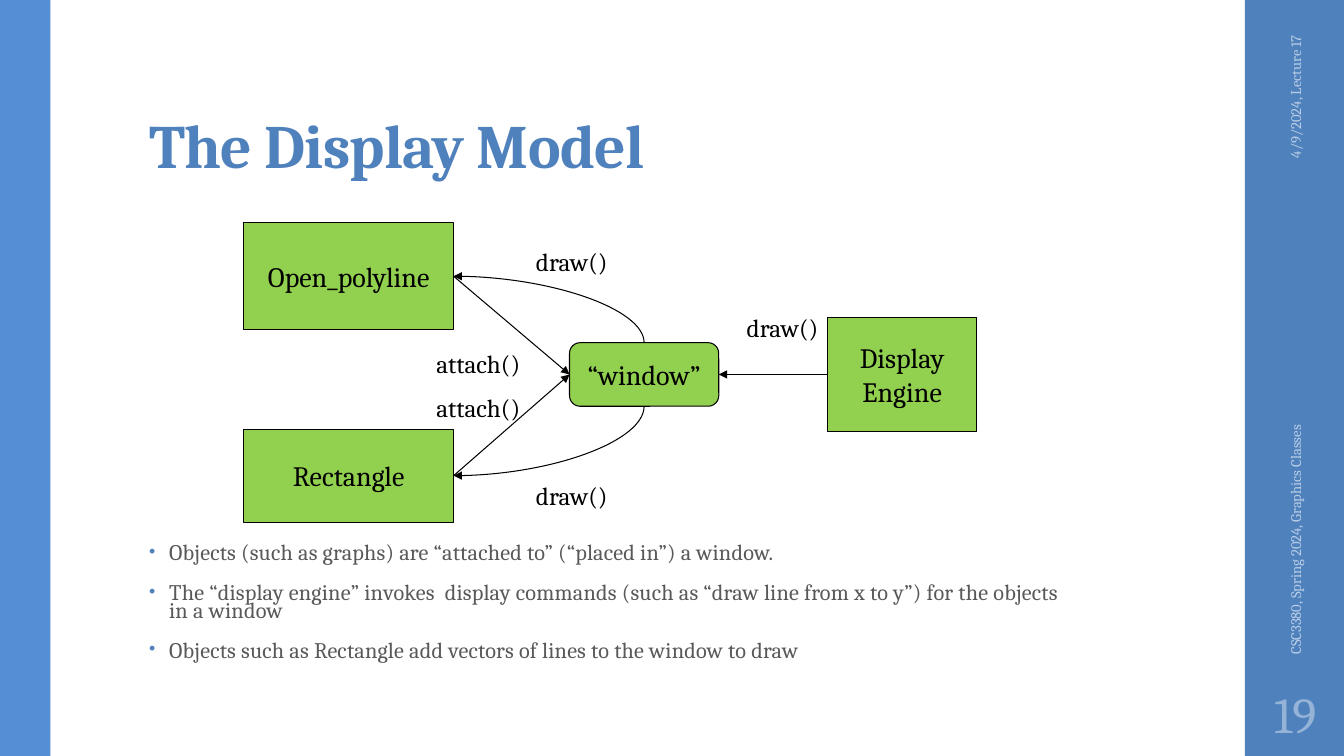
from lxml import etree
from pptx import Presentation
from pptx.dml.color import RGBColor
from pptx.enum.shapes import MSO_CONNECTOR, MSO_SHAPE
from pptx.enum.text import MSO_ANCHOR, MSO_AUTO_SIZE, PP_ALIGN
from pptx.oxml.ns import qn
from pptx.util import Pt

RECT, ROUND = MSO_SHAPE.RECTANGLE, MSO_SHAPE.ROUNDED_RECTANGLE
STRAIGHT, CURVE = MSO_CONNECTOR.STRAIGHT, MSO_CONNECTOR.CURVE
LEFT, CENTER, RIGHT = PP_ALIGN.LEFT, PP_ALIGN.CENTER, PP_ALIGN.RIGHT
TOP_ANCHOR, MIDDLE, BOTTOM_ANCHOR = MSO_ANCHOR.TOP, MSO_ANCHOR.MIDDLE, MSO_ANCHOR.BOTTOM
NO_FIT, GROW = MSO_AUTO_SIZE.NONE, MSO_AUTO_SIZE.SHAPE_TO_FIT_TEXT
TOP_SIDE, LEFT_SIDE, BOTTOM_SIDE, RIGHT_SIDE = range(4)

BLUE, LIGHT_BLUE, GREEN, BLACK = "4F81BD", "558ED5", "92D050", "000000"


def rgb(value):
    return RGBColor.from_string(value)


def assign(target, values):
    """Set each attribute of target that values names."""
    for name, value in values.items():
        setattr(target, name, value)


class SlideBuilder:
    font = "Cambria"

    def __init__(self, slide):
        self.slide = slide
        self.shapes = slide.shapes

    def fill_text(self, tf, lines, size, color, align=LEFT, bold=False, spacing=0,
                  para=None, **frame):
        """Fill a text frame with one paragraph per line."""
        assign(tf, {"auto_size": NO_FIT, "word_wrap": True, **frame})
        for i, line in enumerate(lines):
            p = tf.paragraphs[0] if i == 0 else tf.add_paragraph()
            assign(p, {"alignment": align, **(para or {})})
            r = p.add_run()
            r.text = line
            assign(r.font, {"name": self.font, "size": Pt(size), "bold": bold})
            r.font.color.rgb = rgb(color)
            if spacing:
                r._r.get_or_add_rPr().set("spc", str(round(spacing * 100)))

    def title(self, text, box):
        sp = self.shapes.title
        assign(sp, dict(zip(("left", "top", "width", "height"), map(Pt, box))))
        self.fill_text(sp.text_frame, [text], 44, BLUE, bold=True, spacing=-0.5,
                       para={"line_spacing": 0.9}, vertical_anchor=BOTTOM_ANCHOR,
                       margin_left=Pt(7.2), margin_right=Pt(7.2),
                       margin_top=Pt(2.2), margin_bottom=Pt(3.6))

    def text(self, lines, box, size, color, rotation=0, **style):
        sp = self.shapes.add_textbox(*map(Pt, box))
        sp.rotation = rotation
        self.fill_text(sp.text_frame, lines, size, color, **style)
        return sp

    def bullets(self, lines, box):
        spacing = {"line_spacing": 0.66, "space_before": Pt(14), "space_after": Pt(2)}
        sp = self.text(lines, box, 15.9, "595959", spacing=0.1, para=spacing)
        for p in sp.text_frame.paragraphs:
            pPr = p._p.get_or_add_pPr()
            pPr.set("marL", str(Pt(14.4)))
            pPr.set("indent", str(-Pt(14.4)))
            color = etree.SubElement(pPr, qn("a:buClr"))
            etree.SubElement(color, qn("a:srgbClr"), val=BLUE)
            etree.SubElement(pPr, qn("a:buSzPct"), val="80000")
            etree.SubElement(pPr, qn("a:buFont"), typeface="Arial")
            etree.SubElement(pPr, qn("a:buChar"), char="•")

    def shape(self, kind, box, fill):
        sp = self.shapes.add_shape(kind, *map(Pt, box))
        sp.shadow.inherit = False
        sp.fill.solid()
        sp.fill.fore_color.rgb = rgb(fill)
        sp.line.fill.background()
        return sp

    def node(self, lines, box, kind=RECT):
        sp = self.shape(kind, box, GREEN)
        sp.line.color.rgb = rgb(BLACK)
        sp.line.width = Pt(0.75)
        self.fill_text(sp.text_frame, lines, 20, BLACK, align=CENTER,
                       vertical_anchor=MIDDLE, word_wrap=False)
        return sp

    def arrow(self, start, start_side, end, end_side, kind=STRAIGHT, arrow_at="tailEnd"):
        """Join two nodes; arrow_at is headEnd (start) or tailEnd (end)."""
        cx = self.shapes.add_connector(kind, 0, 0, 0, 0)
        cx.begin_connect(start, start_side)
        cx.end_connect(end, end_side)
        cx.line.color.rgb = rgb(BLACK)
        cx.line.width = Pt(0.75)
        spPr = cx._element.spPr
        etree.SubElement(spPr.find(qn("a:ln")), qn(f"a:{arrow_at}"), type="triangle")
        etree.SubElement(spPr, qn("a:effectLst"))
        if kind == CURVE:
            spPr.find(qn("a:prstGeom")).set("prst", "curvedConnector2")


def main():
    prs = Presentation()
    prs.slide_width, prs.slide_height = Pt(960), Pt(540)
    s = SlideBuilder(prs.slides.add_slide(prs.slide_layouts[5]))

    s.shape(RECT, (889.2, 0, 70.8, 540), BLUE)
    s.shape(RECT, (0, 0, 36, 540), LIGHT_BLUE)
    s.title("The Display Model", (99.4, 23, 763.2, 110.2))
    s.bullets([
        "Objects (such as graphs) are “attached to” (“placed in”) a window.",
        "The “display engine” invokes  display commands (such as “draw line from x to y”) "
        "for the objects in a window",
        "Objects such as Rectangle add vectors of lines to the window to draw",
    ], (99.4, 387, 676.8, 100))

    s.text(["4/9/2024, Lecture 17"], (850.3, 78.5, 149.8, 28.8), 10.5, "B9CDE5",
           rotation=270, align=RIGHT, vertical_anchor=MIDDLE)
    s.text(["CSC3380, Spring 2024, Graphics Classes"], (784.1, 319, 282.2, 28.8), 10.5,
           "B9CDE5", rotation=270, vertical_anchor=MIDDLE)
    s.text(["19"], (889.2, 486, 72, 46.8), 36, "95B3D7", align=CENTER,
           vertical_anchor=MIDDLE, margin_left=Pt(3.6), margin_right=Pt(3.6))

    polyline = s.node(["Open_polyline"], (174.2, 159.2, 149.8, 76.2))
    rectangle = s.node(["Rectangle"], (174.2, 306.7, 149.8, 66.2))
    window = s.node(["“window”"], (406.8, 244.8, 106.6, 45.4), ROUND)
    engine = s.node(["Display", "Engine"], (591.1, 226.5, 106.6, 82))

    for figure, window_side in ((polyline, TOP_SIDE), (rectangle, BOTTOM_SIDE)):
        s.arrow(figure, RIGHT_SIDE, window, LEFT_SIDE)
        s.arrow(figure, RIGHT_SIDE, window, window_side, CURVE, "headEnd")
    s.arrow(engine, LEFT_SIDE, window, RIGHT_SIDE)

    for call, left, top, width in (
        ("draw()", 375.8, 172.1, 69.1),
        ("draw()", 375.8, 339.8, 69.1),
        ("draw()", 526.3, 219.6, 69.1),
        ("attach()", 304.6, 245.5, 79.9),
        ("attach()", 304.6, 276.5, 79.9),
    ):
        s.text([call], (left, top, width, 28.8), 18, BLACK,
               vertical_anchor=TOP_ANCHOR, word_wrap=False, auto_size=GROW)

    prs.save("out.pptx")


if __name__ == "__main__":
    main()
